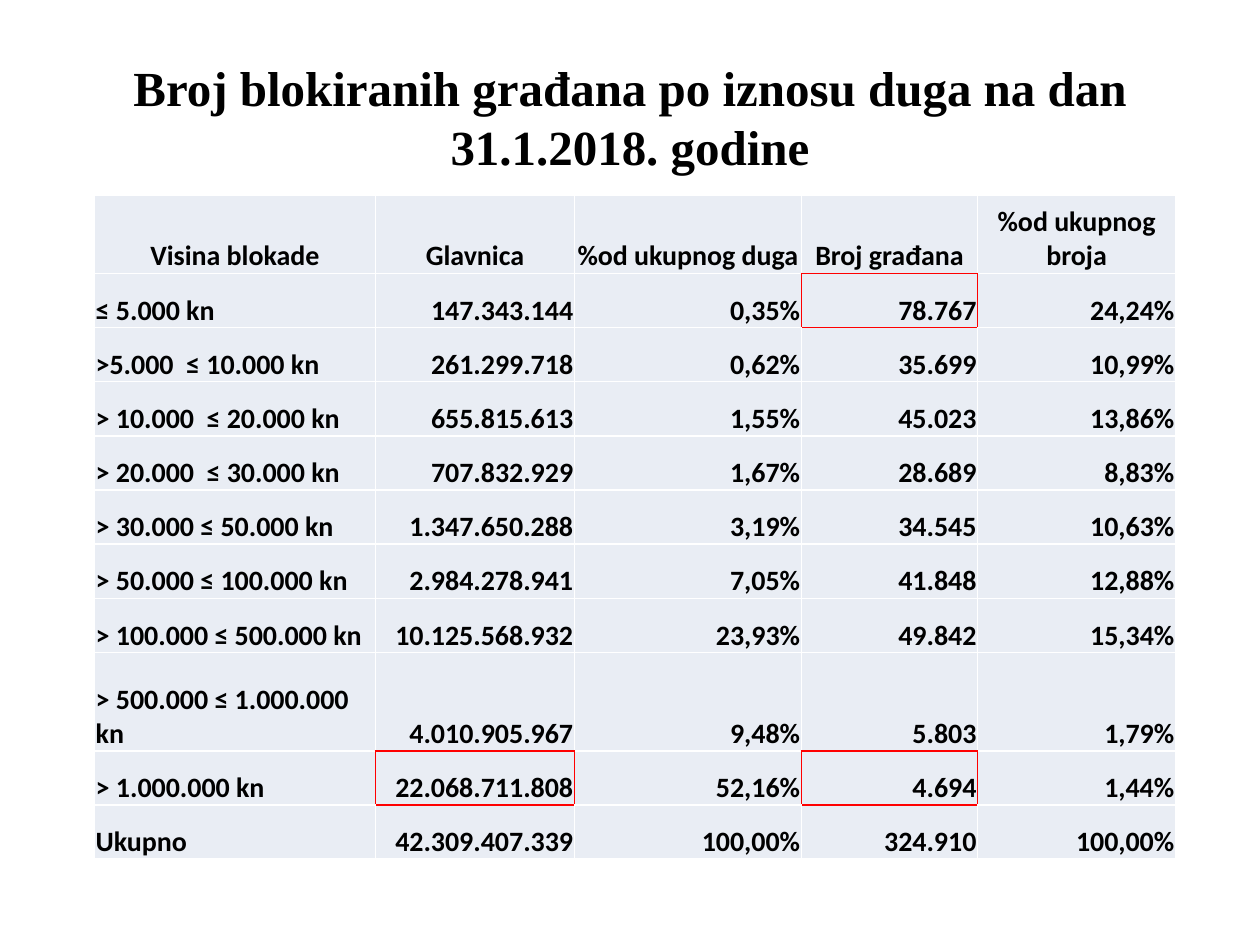
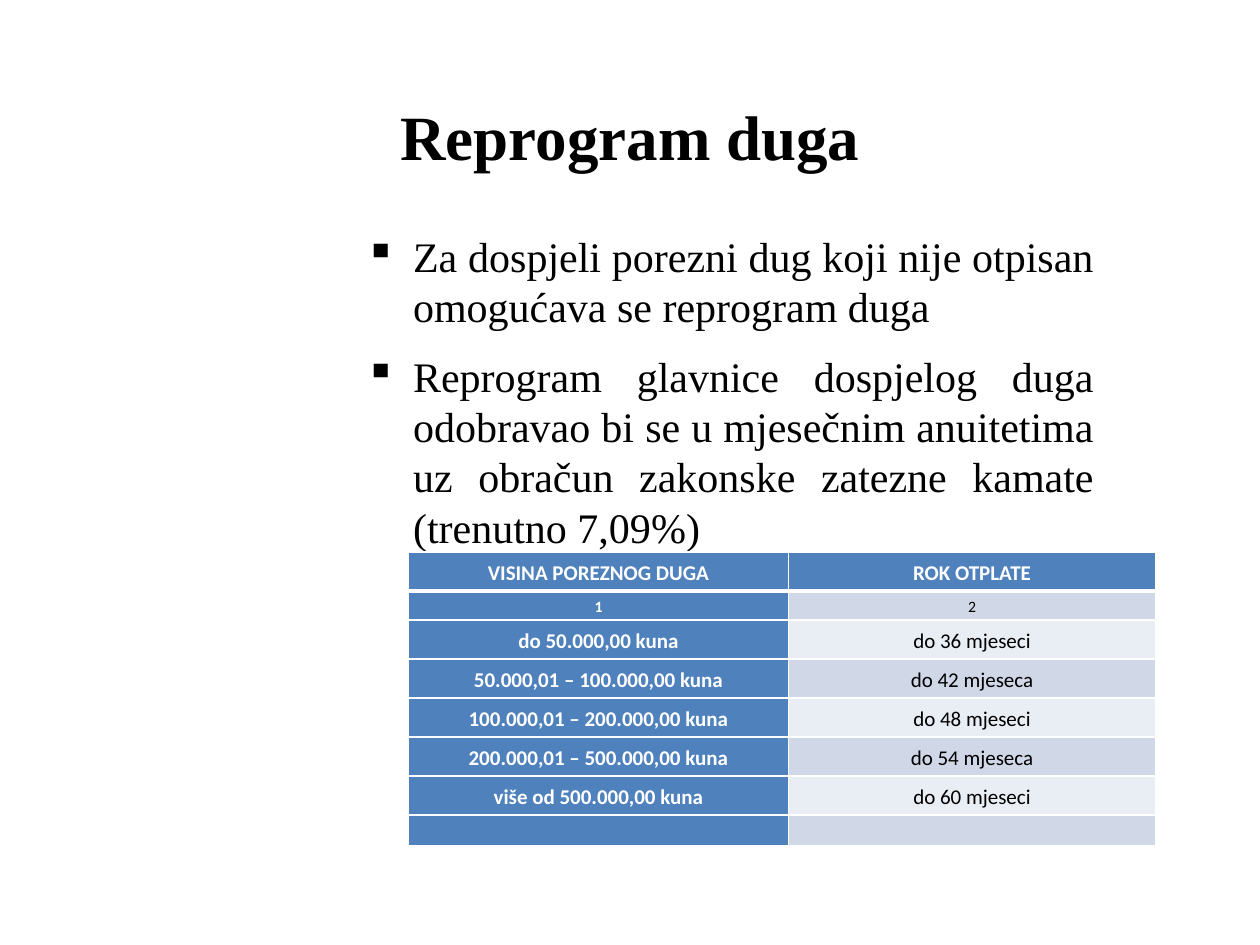
from dataclasses import dataclass
from typing import Callable, NamedTuple

from lxml import etree
from pptx import Presentation
from pptx.dml.color import RGBColor
from pptx.enum.text import MSO_ANCHOR, PP_ALIGN
from pptx.oxml.ns import qn
from pptx.util import Inches, Pt

LEFT, CENTER, RIGHT, JUSTIFY = PP_ALIGN.LEFT, PP_ALIGN.CENTER, PP_ALIGN.RIGHT, PP_ALIGN.JUSTIFY
TOP, MIDDLE, BOTTOM = MSO_ANCHOR.TOP, MSO_ANCHOR.MIDDLE, MSO_ANCHOR.BOTTOM

# Grid: 100 columns by 75 rows of square units
SLIDE_WIDTH, SLIDE_HEIGHT = Inches(10), Inches(7.5)
UNIT = SLIDE_WIDTH / 100


@dataclass(frozen=True)
class Theme:
    serif: str = "Times New Roman"
    sans: str = "Calibri"
    ink: str = "000000"
    white: str = "FFFFFF"
    accent: str = "4F81BD"
    band_dark: str = "D0D8E8"
    band_light: str = "E9EDF4"
    highlight: str = "FF0000"
    title_long: float = 28
    title_short: float = 36
    body: float = 24
    debt_cell: float = 16
    term_cell: float = 12
    term_number: float = 9


THEME = Theme()


class Area(NamedTuple):
    left: float
    top: float
    width: float
    height: float


class Border(NamedTuple):
    color: str = THEME.white
    points: float = 1


@dataclass(frozen=True)
class CellStyle:
    fill: str
    size: float
    color: str = THEME.ink
    bold: bool = False
    align: PP_ALIGN = CENTER
    line_spacing: float | None = None
    after: float | None = None


@dataclass(frozen=True)
class TableSpec:
    area: Area
    columns: list[float]
    rows: list[float]
    cells: list[list[str]]
    margins: Area  # left, top, right, bottom in grid units
    anchor: MSO_ANCHOR
    style: Callable[[int, int], CellStyle]
    border: Callable[[int, int, str], Border]


def units(value: float) -> int:
    return round(value * UNIT)


def write_text(frame, *texts: str, font: str = THEME.sans, size: float, color: str = THEME.ink,
               bold: bool = False, align: PP_ALIGN = LEFT, bullet: str = "", indent: float = 0,
               before: float | None = None, after: float | None = None,
               line_spacing: float | None = None) -> None:
    """Write one formatted paragraph per text."""
    for index, text in enumerate(texts):
        paragraph = frame.add_paragraph() if index else frame.paragraphs[0]
        if bullet:
            properties = paragraph._p.get_or_add_pPr()
            properties.set("marL", str(units(indent)))
            properties.set("indent", str(-units(indent)))
            etree.SubElement(properties, qn("a:buChar"), char=bullet)
        paragraph.alignment = align
        if index and before is not None:
            paragraph.space_before = Pt(before)
        if after is not None:
            paragraph.space_after = Pt(after)
        if line_spacing is not None:
            paragraph.line_spacing = line_spacing
        if not text:
            etree.SubElement(paragraph._p, qn("a:endParaRPr"), sz=str(round(size * 100)))
            continue
        run = paragraph.add_run()
        run.text = text
        run.font.name, run.font.size, run.font.bold = font, Pt(size), bold
        run.font.color.rgb = RGBColor.from_string(color)


def add_text(slide, area: Area, *texts: str, anchor: MSO_ANCHOR = TOP, **text_format) -> None:
    frame = slide.shapes.add_textbox(*map(units, area)).text_frame
    frame.word_wrap = True
    frame.vertical_anchor = anchor
    write_text(frame, *texts, font=THEME.serif, **text_format)


def add_title(slide, area: Area, text: str, size: float) -> None:
    add_text(slide, area, text, anchor=MIDDLE, size=size, bold=True, align=CENTER)


def draw_border(cell, side: str, border: Border) -> None:
    line = etree.SubElement(cell._tc.get_or_add_tcPr(), qn(f"a:ln{side}"), w=str(Pt(border.points)))
    fill = etree.SubElement(line, qn("a:solidFill"))
    etree.SubElement(fill, qn("a:srgbClr"), val=border.color)


def add_table(slide, spec: TableSpec) -> None:
    table = slide.shapes.add_table(len(spec.rows), len(spec.columns), *map(units, spec.area)).table
    table.first_row = table.horz_banding = False
    for column, width in zip(table.columns, spec.columns):
        column.width = units(width)
    for row, height in zip(table.rows, spec.rows):
        row.height = units(height)
    for r, texts in enumerate(spec.cells):
        for c, text in enumerate(texts):
            cell, style = table.cell(r, c), spec.style(r, c)
            (cell.margin_left, cell.margin_top,
             cell.margin_right, cell.margin_bottom) = map(units, spec.margins)
            cell.vertical_anchor = spec.anchor
            for side in "LRTB":
                draw_border(cell, side, spec.border(r, c, side))
            cell.fill.solid()
            cell.fill.fore_color.rgb = RGBColor.from_string(style.fill)
            write_text(cell.text_frame, text, size=style.size, color=style.color,
                       bold=style.bold, align=style.align,
                       line_spacing=style.line_spacing, after=style.after)


# Slide 1: blocked citizens by debt
DEBT_CELLS = [
    ["Visina blokade", "Glavnica", "%od ukupnog duga", "Broj građana", "%od ukupnog broja"],
    ["≤ 5.000 kn", "147.343.144", "0,35%", "78.767", "24,24%"],
    [">5.000  ≤ 10.000 kn", "261.299.718", "0,62%", "35.699", "10,99%"],
    ["> 10.000  ≤ 20.000 kn", "655.815.613", "1,55%", "45.023", "13,86%"],
    ["> 20.000  ≤ 30.000 kn", "707.832.929", "1,67%", "28.689", "8,83%"],
    ["> 30.000 ≤ 50.000 kn", "1.347.650.288", "3,19%", "34.545", "10,63%"],
    ["> 50.000 ≤ 100.000 kn", "2.984.278.941", "7,05%", "41.848", "12,88%"],
    ["> 100.000 ≤ 500.000 kn", "10.125.568.932", "23,93%", "49.842", "15,34%"],
    ["> 500.000 ≤ 1.000.000 kn", "4.010.905.967", "9,48%", "5.803", "1,79%"],
    ["> 1.000.000 kn", "22.068.711.808", "52,16%", "4.694", "1,44%"],
    ["Ukupno", "42.309.407.339", "100,00%", "324.910", "100,00%"],
]
HIGHLIGHTED = {(1, 3), (9, 1), (9, 3)}
NEIGHBOUR = {"L": (0, -1), "R": (0, 1), "T": (-1, 0), "B": (1, 0)}


def debt_style(row: int, column: int) -> CellStyle:
    align = CENTER if row == 0 else RIGHT if column else LEFT
    return CellStyle(THEME.band_light, THEME.debt_cell, bold=True, align=align)


def debt_border(row: int, column: int, side: str) -> Border:
    """An edge is red when the cell on either side of it is highlighted."""
    down, across = NEIGHBOUR[side]
    touches = HIGHLIGHTED & {(row, column), (row + down, column + across)}
    return Border(THEME.highlight) if touches else Border()


DEBT_TABLE = TableSpec(
    area=Area(7.5, 15.5, 85.8, 52.8),
    columns=[22.3, 15.8, 18, 14, 15.7],
    rows=[6.2] + [4.3] * 7 + [7.8] + [4.3] * 2,
    cells=DEBT_CELLS, margins=Area(0.1, 0.1, 0.1, 0), anchor=BOTTOM,
    style=debt_style, border=debt_border,
)

# Slide 2: repayment terms
TERM_CELLS = [
    ["VISINA POREZNOG DUGA", "ROK OTPLATE"],
    ["1", "2"],
    ["do 50.000,00 kuna", "do 36 mjeseci"],
    ["50.000,01 – 100.000,00 kuna", "do 42 mjeseca"],
    ["100.000,01 – 200.000,00 kuna", "do 48 mjeseci"],
    ["200.000,01 – 500.000,00 kuna", "do 54 mjeseca"],
    ["više od 500.000,00 kuna", "do 60 mjeseci"],
    ["", ""],
]
REPROGRAM_POINTS = [
    "Za dospjeli porezni dug koji nije otpisan omogućava se reprogram duga",
    "Reprogram glavnice dospjelog duga odobravao bi se u mjesečnim anuitetima "
    "uz obračun zakonske zatezne kamate (trenutno 7,09%)",
]


def term_style(row: int, column: int) -> CellStyle:
    heading = row == 0 or column == 0
    band = THEME.band_dark if row % 2 else THEME.band_light
    return CellStyle(
        fill=THEME.accent if heading else band,
        size=THEME.term_number if row == 1 else THEME.term_cell,
        color=THEME.white if heading else THEME.ink,
        bold=heading, line_spacing=1.15, after=10,
    )


def term_border(row: int, column: int, side: str) -> Border:
    return Border(points=3) if row == 0 and side == "B" else Border()


TERM_TABLE = TableSpec(
    area=Area(32.4, 43.8, 59.3, 23.4),
    columns=[30.2, 29.1],
    rows=[3.1, 2.3] + [3.1] * 5 + [2.4],
    cells=TERM_CELLS, margins=Area(0.7, 0, 0.7, 0), anchor=MIDDLE,
    style=term_style, border=term_border,
)


def main() -> None:
    deck = Presentation()
    deck.slide_width, deck.slide_height = SLIDE_WIDTH, SLIDE_HEIGHT
    blank = deck.slide_layouts[6]

    debt_slide = deck.slides.add_slide(blank)
    add_title(debt_slide, Area(5, 3, 90, 12.5),
              "Broj blokiranih građana po iznosu duga na dan 31.1.2018. godine", THEME.title_long)
    add_table(debt_slide, DEBT_TABLE)

    term_slide = deck.slides.add_slide(blank)
    add_title(term_slide, Area(5, 6.8, 90, 7.9), "Reprogram duga", THEME.title_short)
    add_text(term_slide, Area(28, 17.8, 59.8, 26), *REPROGRAM_POINTS, size=THEME.body,
             align=JUSTIFY, bullet="▪", indent=3.8, before=4.8, after=6)
    add_table(term_slide, TERM_TABLE)

    deck.save("out.pptx")


if __name__ == "__main__":
    main()
